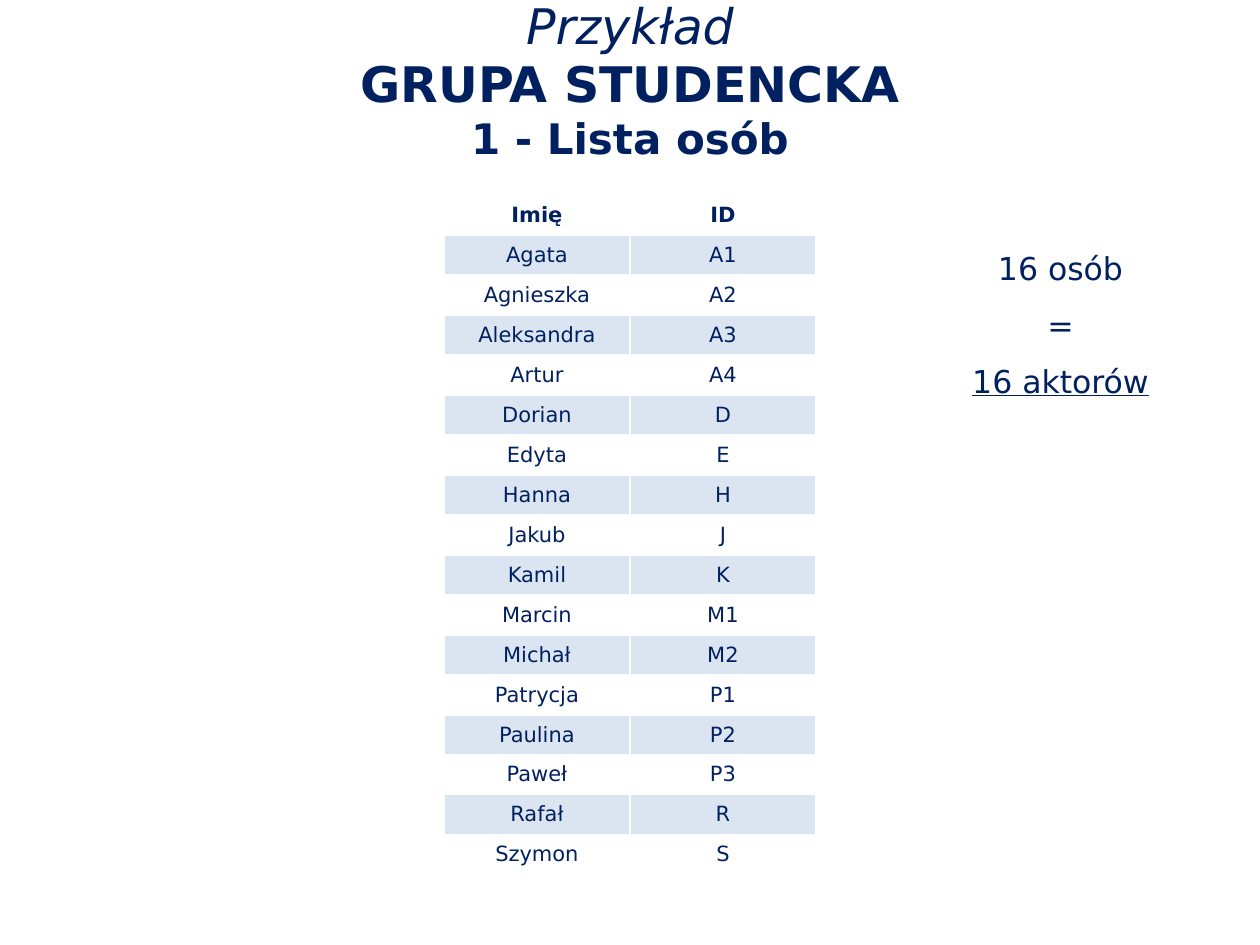
from typing import NamedTuple

from lxml import etree
from pptx import Presentation
from pptx import util as u
from pptx.dml.color import RGBColor
from pptx.enum import text
from pptx.oxml.ns import qn

PX_PER_INCH = 126
FONT = "DejaVu Sans"
NAVY = RGBColor(0x00, 0x20, 0x60)
BAND_BLUE = RGBColor(0x4F, 0x81, 0xBD)
BAND_OPACITY = 20  # percent


class Line(NamedTuple):
    words: str
    size: int
    bold: bool = False
    italic: bool = False
    underline: bool = False


class Person(NamedTuple):
    name: str
    code: str


TITLE = [
    Line("Przykład", 28, italic=True),
    Line("GRUPA STUDENCKA", 28, bold=True),
    Line("1 - Lista osób", 24, bold=True),
]
SUMMARY = [
    Line("16 osób", 18),
    Line("=", 18),
    Line("16 aktorów", 18, underline=True),
]
HEADER = Person("Imię", "ID")
PEOPLE = [
    Person("Agata", "A1"),
    Person("Agnieszka", "A2"),
    Person("Aleksandra", "A3"),
    Person("Artur", "A4"),
    Person("Dorian", "D"),
    Person("Edyta", "E"),
    Person("Hanna", "H"),
    Person("Jakub", "J"),
    Person("Kamil", "K"),
    Person("Marcin", "M1"),
    Person("Michał", "M2"),
    Person("Patrycja", "P1"),
    Person("Paulina", "P2"),
    Person("Paweł", "P3"),
    Person("Rafał", "R"),
    Person("Szymon", "S"),
]


def px(length: int) -> u.Emu:
    return u.Emu(round(length * u.Inches(1) / PX_PER_INCH))


def write(paragraph, words: str, *, size: int, bold: bool = False,
          italic: bool = False, underline: bool = False) -> None:
    """Append a navy run to a centred paragraph."""
    paragraph.alignment = text.PP_ALIGN.CENTER
    run = paragraph.add_run()
    run.text = words
    font = run.font
    font.name, font.size = FONT, u.Pt(size)
    font.bold, font.italic, font.underline = bold, italic, underline
    font.color.rgb = NAVY


def add_text_frame(slide, left: int, top: int, width: int, height: int):
    box = slide.shapes.add_textbox(px(left), px(top), px(width), px(height))
    return box.text_frame


def add_title(slide) -> None:
    frame = add_text_frame(slide, 0, 0, 1260, 158)
    frame.word_wrap = True
    frame.vertical_anchor = text.MSO_ANCHOR.MIDDLE
    paragraph = frame.paragraphs[0]
    for index, line in enumerate(TITLE):
        if index:
            paragraph.add_line_break()
        write(paragraph, **line._asdict())


def add_summary(slide) -> None:
    frame = add_text_frame(slide, 958, 224, 205, 176)
    frame.word_wrap = False
    frame.auto_size = text.MSO_AUTO_SIZE.SHAPE_TO_FIT_TEXT
    for index, line in enumerate(SUMMARY):
        paragraph = frame.add_paragraph() if index else frame.paragraphs[0]
        paragraph.line_spacing = 1.5
        write(paragraph, **line._asdict())


def fill_band(cell) -> None:
    """Give a cell the translucent band colour."""
    cell.fill.solid()
    cell.fill.fore_color.rgb = BAND_BLUE
    color = cell.fill._xPr.find(f"{qn('a:solidFill')}/{qn('a:srgbClr')}")
    etree.SubElement(color, qn("a:alpha"), val=str(BAND_OPACITY * 1000))


def add_people_table(slide) -> None:
    rows = [HEADER, *PEOPLE]
    column_width, row_height = 186, 40
    table = slide.shapes.add_table(
        len(rows), len(HEADER), px(444), px(195),
        px(column_width * len(HEADER)), px(row_height * len(rows))).table
    table.first_row = table.horz_banding = False
    for row_index, person in enumerate(rows):
        table.rows[row_index].height = px(row_height)
        for column_index, words in enumerate(person):
            cell = table.cell(row_index, column_index)
            cell.vertical_anchor = text.MSO_ANCHOR.MIDDLE
            cell.margin_left = cell.margin_right = px(4)
            cell.margin_top = cell.margin_bottom = px(2)
            if row_index % 2:
                fill_band(cell)
            else:
                cell.fill.background()
            write(cell.text_frame.paragraphs[0], words, size=12, bold=row_index == 0)


def main() -> None:
    presentation = Presentation()
    presentation.slide_width, presentation.slide_height = px(1260), px(945)
    slide = presentation.slides.add_slide(presentation.slide_layouts[6])
    add_title(slide)
    add_people_table(slide)
    add_summary(slide)
    presentation.save("out.pptx")


if __name__ == "__main__":
    main()
